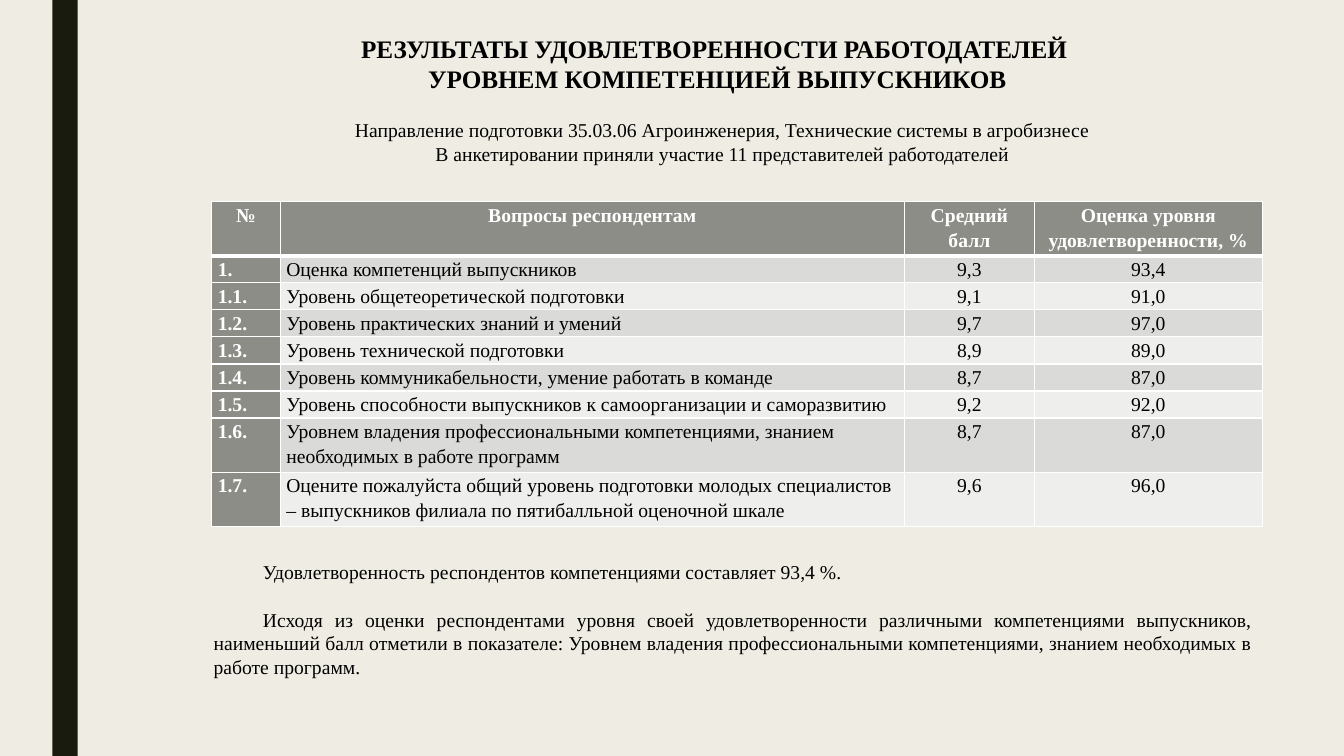
from lxml.etree import SubElement
from pptx import Presentation
from pptx.dml.color import RGBColor
from pptx.enum.shapes import MSO_SHAPE
from pptx.enum.text import MSO_ANCHOR, PP_ALIGN
from pptx.oxml.ns import qn
from pptx.util import Inches, Pt

COLORS = {
    "background": "EFEDE3",
    "stripe": "191B0E",
    "header": "8C8D86",
    "odd_row": "DADBD9",
    "even_row": "EEEEED",
    "text": "000000",
    "white": "FFFFFF",
}

TITLE = [
    "РЕЗУЛЬТАТЫ УДОВЛЕТВОРЕННОСТИ РАБОТОДАТЕЛЕЙ ",
    "УРОВНЕМ КОМПЕТЕНЦИЕЙ ВЫПУСКНИКОВ",
]
SUBTITLE = [
    "Направление подготовки 35.03.06 Агроинженерия, Технические системы в агробизнесе",
    "В анкетировании приняли участие 11 представителей работодателей",
]
CONCLUSIONS = [
    "Удовлетворенность респондентов компетенциями составляет 93,4 %.",
    "Исходя из оценки респондентами уровня своей удовлетворенности различными "
    "компетенциями выпускников, наименьший балл отметили в показателе: Уровнем "
    "владения профессиональными компетенциями, знанием необходимых в работе программ.",
]
SURVEY = [
    ("№", "Вопросы респондентам", "Средний балл", "Оценка уровня удовлетворенности, %"),
    ("1.", "Оценка компетенций выпускников", "9,3", "93,4"),
    ("1.1.", "Уровень общетеоретической подготовки", "9,1", "91,0"),
    ("1.2.", "Уровень практических знаний и умений", "9,7", "97,0"),
    ("1.3.", "Уровень технической подготовки", "8,9", "89,0"),
    ("1.4.", "Уровень коммуникабельности, умение работать в команде", "8,7", "87,0"),
    ("1.5.", "Уровень способности выпускников к самоорганизации и саморазвитию",
     "9,2", "92,0"),
    ("1.6.", "Уровнем владения профессиональными компетенциями, знанием "
     "необходимых в работе программ", "8,7", "87,0"),
    ("1.7.", "Оцените пожалуйста общий уровень подготовки молодых специалистов "
     "– выпускников филиала по пятибалльной оценочной шкале", "9,6", "96,0"),
]
COLUMN_WIDTHS = [0.68, 6.19, 1.29, 2.26]
SINGLE_ROW, DOUBLE_ROW = 0.26, 0.53
ROW_HEIGHTS = [DOUBLE_ROW] + [SINGLE_ROW] * 6 + [DOUBLE_ROW] * 2


class SlideBuilder:
    """Holds the text style and the slide being filled."""

    font = "Times New Roman"

    def __init__(self, page):
        self.page = page

    def color(self, name):
        return RGBColor.from_string(COLORS[name])

    def background(self):
        fill = self.page.background.fill
        fill.solid()
        fill.fore_color.rgb = self.color("background")

    def stripe(self, left, top, width, height):
        bar = self.page.shapes.add_shape(
            MSO_SHAPE.RECTANGLE, Inches(left), Inches(top), Inches(width), Inches(height))
        bar.shadow.inherit = False
        bar.fill.solid()
        bar.fill.fore_color.rgb = self.color("stripe")
        bar.line.fill.background()

    def span(self, para, text, size=14, color="text", bold=False):
        span = para.add_run()
        span.text = text
        span.font.name = self.font
        span.font.size = Pt(size)
        span.font.bold = bold
        span.font.color.rgb = self.color(color)

    def text(self, left, top, width, height, lines, align=PP_ALIGN.CENTER,
             anchor=MSO_ANCHOR.TOP, indent=0, gap=0, **style):
        """Add a text box; indent is in inches, gap between paragraphs in points."""
        box = self.page.shapes.add_textbox(
            Inches(left), Inches(top), Inches(width), Inches(height))
        frame = box.text_frame
        frame.word_wrap = True
        frame.vertical_anchor = anchor
        for number, line in enumerate(lines):
            para = frame.add_paragraph() if number else frame.paragraphs[0]
            para.alignment = align
            if indent:
                para._p.get_or_add_pPr().set("indent", str(Inches(indent)))
            if number and gap:
                para.space_before = Pt(gap)
            self.span(para, line, **style)

    def borders(self, cell, top=1, bottom=1):
        """Draw white cell borders; widths are in points."""
        properties = cell._tc.get_or_add_tcPr()
        widths = {"a:lnL": 1, "a:lnR": 1, "a:lnT": top, "a:lnB": bottom}
        for place, (tag, width) in enumerate(widths.items()):
            line = SubElement(properties, qn(tag), w=str(Pt(width)))
            fill = SubElement(line, qn("a:solidFill"))
            SubElement(fill, qn("a:srgbClr"), val=COLORS["white"])
            properties.insert(place, line)

    def cell(self, cell, text, row, column):
        is_heading = row == 0 or column == 0
        band = "odd_row" if row % 2 else "even_row"
        cell.fill.solid()
        cell.fill.fore_color.rgb = self.color("header" if is_heading else band)
        cell.margin_left = cell.margin_right = Inches(0.06)
        cell.margin_top = cell.margin_bottom = 0
        para = cell.text_frame.paragraphs[0]
        is_left = row > 0 and column < 2
        para.alignment = PP_ALIGN.LEFT if is_left else PP_ALIGN.CENTER
        para.line_spacing = 1.15
        self.span(para, text, color="white" if is_heading else "text", bold=is_heading)
        self.borders(cell, top=3 if row == 1 else 1, bottom=3 if row == 0 else 1)

    def table(self, left, top, rows, widths, heights):
        frame = self.page.shapes.add_table(
            len(rows), len(widths), Inches(left), Inches(top),
            Inches(sum(widths)), Inches(sum(heights)))
        table = frame.table
        table.horz_banding = False
        for column, width in zip(table.columns, widths):
            column.width = Inches(width)
        for line, height in zip(table.rows, heights):
            line.height = Inches(height)
        for row, values in enumerate(rows):
            for column, value in enumerate(values):
                self.cell(table.cell(row, column), value, row, column)


def main():
    deck = Presentation()
    deck.slide_width, deck.slide_height = Inches(13.33), Inches(7.5)
    builder = SlideBuilder(deck.slides.add_slide(deck.slide_layouts[6]))
    builder.background()
    builder.stripe(0.52, 0, 0.25, 7.5)
    builder.text(0.14, 0.28, 13.95, 0.71, TITLE, size=18, bold=True)
    builder.text(1.49, 1.12, 10.86, 0.57, SUBTITLE,
                 anchor=MSO_ANCHOR.MIDDLE, indent=0.49)
    builder.text(2.02, 5.51, 10.5, 1.28, CONCLUSIONS,
                 align=PP_ALIGN.JUSTIFY, indent=0.49, gap=17)
    builder.table(2.1, 2, SURVEY, COLUMN_WIDTHS, ROW_HEIGHTS)
    deck.save("out.pptx")


if __name__ == "__main__":
    main()
